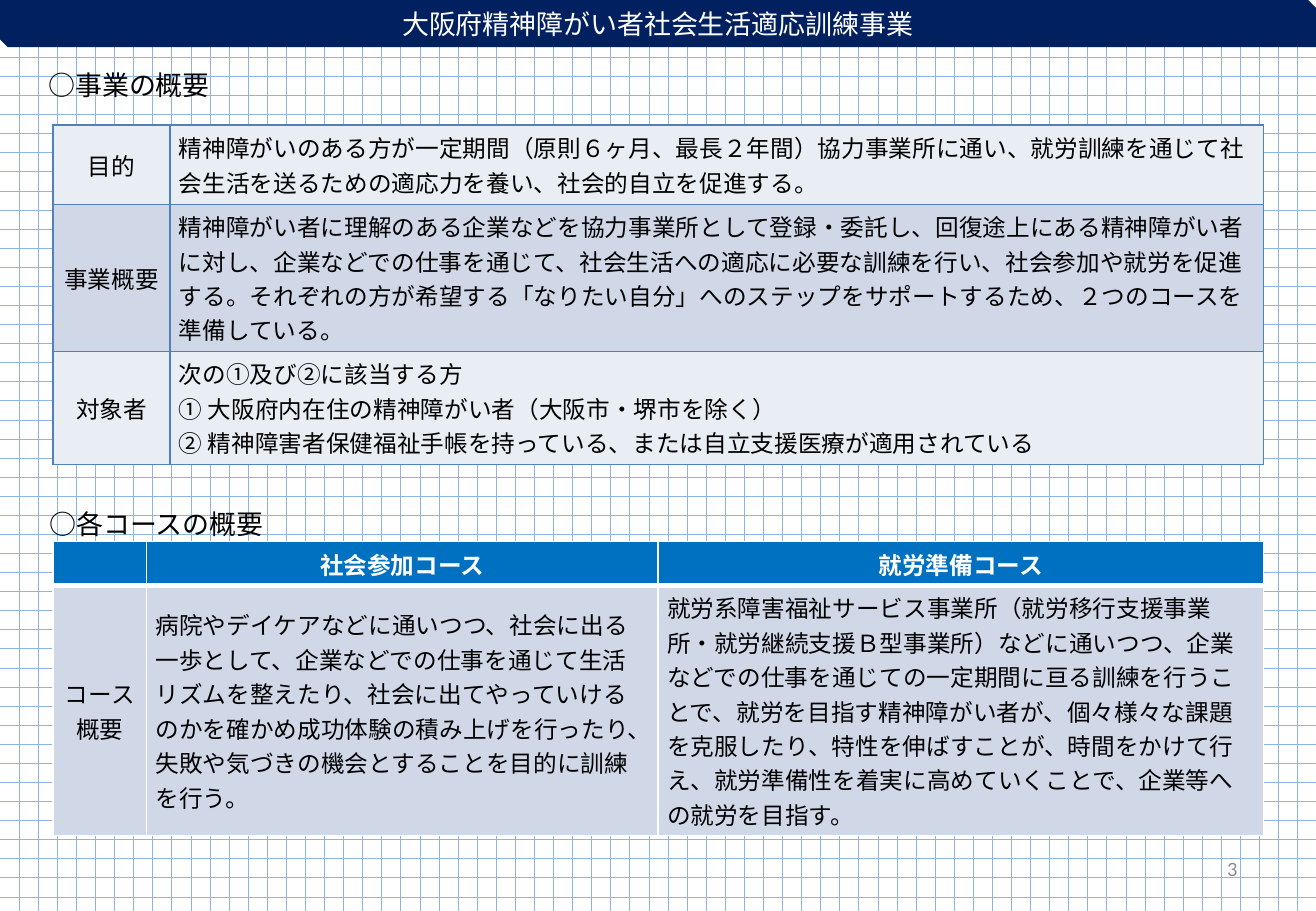
"""Build the slide on the social adaptation training programme."""
from dataclasses import dataclass
from typing import Any

from lxml import etree
from pptx import Presentation
from pptx.dml.color import RGBColor
from pptx.enum.dml import MSO_PATTERN
from pptx.enum.shapes import MSO_SHAPE
from pptx.enum.text import MSO_ANCHOR, MSO_AUTO_SIZE, PP_ALIGN
from pptx.oxml.ns import qn
from pptx.util import Pt

MIDDLE, TOP = MSO_ANCHOR.MIDDLE, MSO_ANCHOR.TOP
LEFT, CENTER, RIGHT = PP_ALIGN.LEFT, PP_ALIGN.CENTER, PP_ALIGN.RIGHT
NO_FIT = MSO_AUTO_SIZE.NONE
DOTTED_GRID = MSO_PATTERN.DOTTED_GRID
SNIPPED = MSO_SHAPE.SNIP_2_DIAG_RECTANGLE
GOTHIC = "Noto Sans CJK JP"
COLORS = {
    "grid": "8EB4E3", "white": "FFFFFF", "black": "000000", "navy": "002060",
    "header": "0070C0", "pale": "E9EDF4", "band": "D0D8E8",
    "border": "4F81BD", "number": "8C8C8C",
}
CELL_FORMAT = {
    "margin_left": Pt(5.3), "margin_right": Pt(5.3),
    "margin_top": Pt(2.7), "margin_bottom": Pt(2.7), "vertical_anchor": MIDDLE,
}
BOX_FORMAT = {
    "margin_left": Pt(7.2), "margin_right": Pt(7.2),
    "margin_top": Pt(3.6), "margin_bottom": Pt(3.6),
    "word_wrap": True, "auto_size": NO_FIT,
}
SLIDE_WIDTH, SLIDE_HEIGHT, BANNER_HEIGHT = 780, 540, 28


@dataclass(frozen=True)
class TextStyle:
    """Look of a piece of text."""
    size: float = 14
    color: str = "black"
    align: Any = LEFT
    bold: bool = False
    font: str = GOTHIC


@dataclass(frozen=True)
class Label:
    """Text box with its frame in points."""
    text: str
    frame: tuple[float, float, float, float]
    style: TextStyle
    anchor: Any = TOP


@dataclass(frozen=True)
class Row:
    """Table row with cell texts, fill and edge widths in points."""
    height: float
    texts: tuple[str, ...]
    fill: str
    header: bool = False
    top: float = 1
    bottom: float = 1


@dataclass(frozen=True)
class Grid:
    """Table with its position, columns and rows."""
    top: float
    columns: tuple[float, ...]
    border: str
    rows: tuple[Row, ...]
    left: float = 31.5


LABELS = (
    Label("○事業の概要", (21.6, 37.4, 118, 26.6), TextStyle(16)),
    Label("○各コースの概要", (22.3, 297.4, 214, 26.6), TextStyle(16)),
    Label("3", (561.6, 500.4, 179, 28.8),
          TextStyle(12.1, "number", RIGHT, font="Calibri"), MIDDLE),
)
GRIDS = (
    Grid(74.2, (69.3, 648), "border", (
        Row(47, ("目的", "精神障がいのある方が一定期間（原則６ヶ月、最長２年間）協力事業所に通い、"
                 "就労訓練を通じて社会生活を送るための適応力を養い、社会的自立を促進する。"), "pale"),
        Row(87, ("事業概要", "精神障がい者に理解のある企業などを協力事業所として登録・委託し、"
                 "回復途上にある精神障がい者に対し、企業などでの仕事を通じて、社会生活への適応に必要な"
                 "訓練を行い、社会参加や就労を促進する。それぞれの方が希望する「なりたい自分」への"
                 "ステップをサポートするため、２つのコースを準備している。"), "band"),
        Row(67.2, ("対象者", "次の①及び②に該当する方\n"
                   "① 大阪府内在住の精神障がい者（大阪市・堺市を除く）\n"
                   "② 精神障害者保健福祉手帳を持っている、または自立支援医療が適用されている"), "pale"),
    )),
    Grid(321.1, (55.4, 303.2, 358.7), "white", (
        Row(26, ("", "社会参加コース", "就労準備コース"), "header", True, bottom=3),
        Row(144, ("コース\n概要",
                  "病院やデイケアなどに通いつつ、社会に出る一歩として、企業などでの仕事を通じて生活"
                  "リズムを整えたり、社会に出てやっていけるのかを確かめ成功体験の積み上げを行ったり、"
                  "失敗や気づきの機会とすることを目的に訓練を行う。",
                  "就労系障害福祉サービス事業所（就労移行支援事業所・就労継続支援Ｂ型事業所）などに"
                  "通いつつ、企業などでの仕事を通じての一定期間に亘る訓練を行うことで、就労を目指す"
                  "精神障がい者が、個々様々な課題を克服したり、特性を伸ばすことが、時間をかけて行え、"
                  "就労準備性を着実に高めていくことで、企業等への就労を目指す。"), "band", top=3),
    )),
)


def color_of(name: str) -> RGBColor:
    """Look up a colour by its name."""
    return RGBColor.from_string(COLORS[name])


def apply_format(target: Any, values: dict[str, Any]) -> None:
    """Set each named attribute on the target."""
    for name, value in values.items():
        setattr(target, name, value)


def write_text(text_frame: Any, text: str, style: TextStyle) -> None:
    """Write one styled paragraph for each line of text."""
    for index, line in enumerate(text.split("\n")):
        para = text_frame.add_paragraph() if index else text_frame.paragraphs[0]
        para.alignment = style.align
        span = para.add_run()
        span.text = line
        apply_format(span.font, {"name": style.font, "size": Pt(style.size), "bold": style.bold})
        span.font.color.rgb = color_of(style.color)
        east_asian = etree.SubElement(span.font._element, qn("a:ea"))
        east_asian.set("typeface", style.font)


def set_borders(cell: Any, color: str, widths: dict[str, float]) -> None:
    """Draw the four edges of a cell."""
    properties = cell._tc.get_or_add_tcPr()
    for index, (edge, width) in enumerate(widths.items()):
        line = etree.Element(qn(f"a:ln{edge}"), w=str(int(Pt(width))))
        solid = etree.SubElement(line, qn("a:solidFill"))
        etree.SubElement(solid, qn("a:srgbClr"), val=COLORS[color])
        properties.insert(index, line)


def add_grid(page: Any, grid: Grid) -> None:
    """Add a table and fill its cells."""
    width, height = sum(grid.columns), sum(row.height for row in grid.rows)
    table = page.shapes.add_table(
        len(grid.rows), len(grid.columns),
        Pt(grid.left), Pt(grid.top), Pt(width), Pt(height)).table
    for column, column_width in zip(table.columns, grid.columns):
        column.width = Pt(column_width)
    for row_index, row in enumerate(grid.rows):
        table.rows[row_index].height = Pt(row.height)
        for column_index, text in enumerate(row.texts):
            cell = table.cell(row_index, column_index)
            apply_format(cell, CELL_FORMAT)
            cell.fill.solid()
            cell.fill.fore_color.rgb = color_of(row.fill)
            set_borders(cell, grid.border, {"L": 1, "R": 1, "T": row.top, "B": row.bottom})
            align = CENTER if row.header or column_index == 0 else LEFT
            color = "white" if row.header else "black"
            write_text(cell.text_frame, text, TextStyle(14, color, align, row.header))


def add_label(page: Any, label: Label) -> None:
    """Add a text box."""
    box = page.shapes.add_textbox(*map(Pt, label.frame))
    apply_format(box.text_frame, BOX_FORMAT | {"vertical_anchor": label.anchor})
    write_text(box.text_frame, label.text, label.style)


def add_banner(page: Any) -> None:
    """Add the banner and put the title on it."""
    frame = {"left": 0, "top": 0, "width": Pt(SLIDE_WIDTH), "height": Pt(BANNER_HEIGHT)}
    banner = page.shapes.add_shape(SNIPPED, *frame.values())
    banner.shadow.inherit = False
    banner.fill.solid()
    banner.fill.fore_color.rgb = color_of("navy")
    banner.line.fill.background()
    title = page.shapes.title
    apply_format(title, frame)
    apply_format(title.text_frame, BOX_FORMAT | {"vertical_anchor": MIDDLE})
    write_text(title.text_frame, "大阪府精神障がい者社会生活適応訓練事業", TextStyle(16, "white", CENTER))
    banner._element.addnext(title._element)


def main() -> None:
    """Build and save the deck."""
    deck = Presentation()
    apply_format(deck, {"slide_width": Pt(SLIDE_WIDTH), "slide_height": Pt(SLIDE_HEIGHT)})
    page = deck.slides.add_slide(deck.slide_layouts[5])
    backdrop = page.background.fill
    backdrop.patterned()
    backdrop.pattern = DOTTED_GRID
    backdrop.fore_color.rgb = color_of("grid")
    backdrop.back_color.rgb = color_of("white")
    add_banner(page)
    for grid in GRIDS:
        add_grid(page, grid)
    for label in LABELS:
        add_label(page, label)
    deck.save("out.pptx")


if __name__ == "__main__":
    main()
